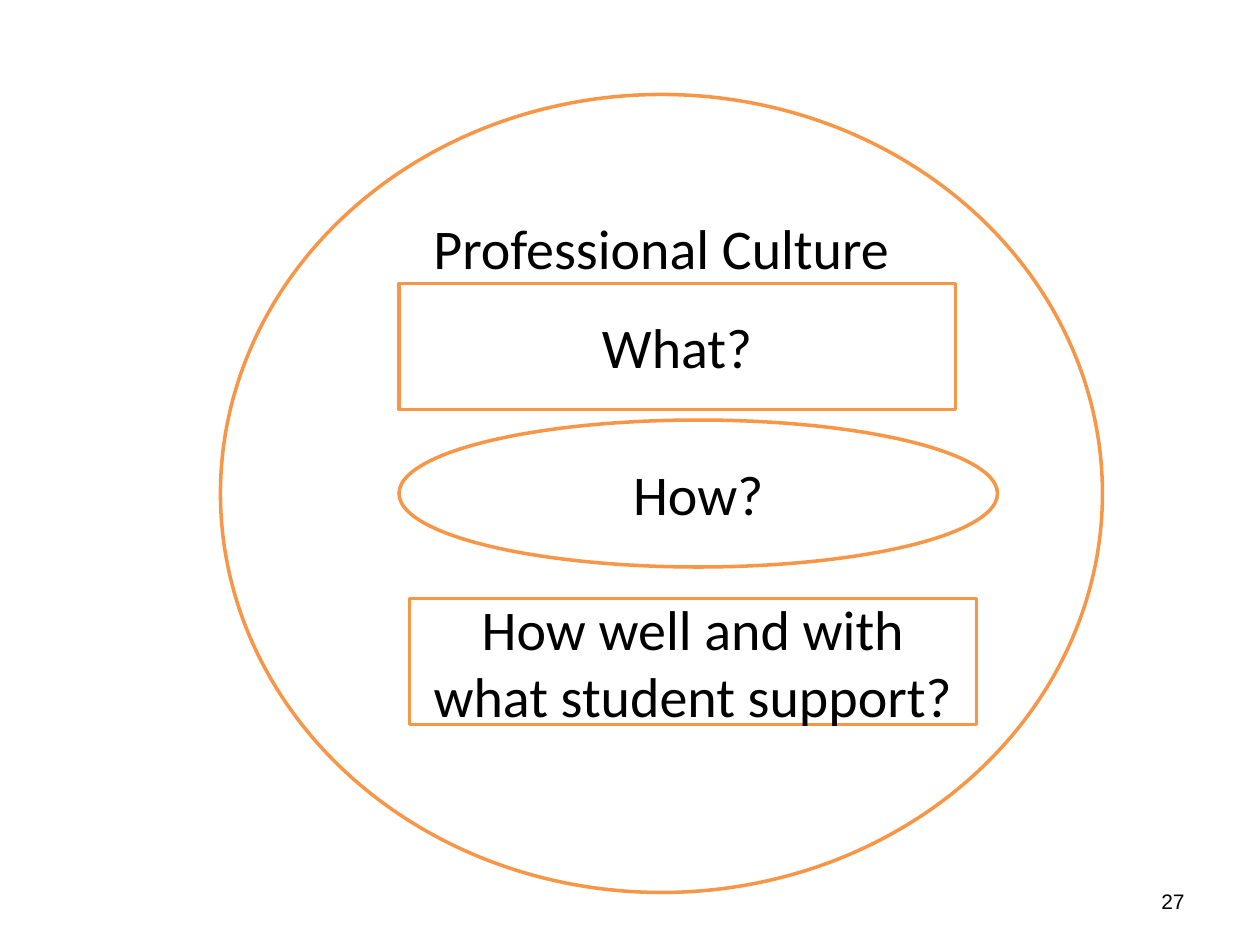
import pptx
import pptx.util
import pptx.dml.color
import pptx.enum.shapes
import pptx.enum.text

Pt = pptx.util.Pt
SHAPE = pptx.enum.shapes.MSO_SHAPE
ANCHOR = pptx.enum.text.MSO_ANCHOR
ALIGN = pptx.enum.text.PP_ALIGN

ORANGE = pptx.dml.color.RGBColor(0xF7, 0x96, 0x46)
WHITE = pptx.dml.color.RGBColor(0xFF, 0xFF, 0xFF)
BLACK = pptx.dml.color.RGBColor(0, 0, 0)

# Content, back to front: text, outline, (left, top, width, height), anchor
CULTURE_AND_QUESTIONS = [
    ("Professional Culture", SHAPE.OVAL, (126, 54, 504, 456), ANCHOR.TOP),
    ("How?", SHAPE.OVAL, (228, 240, 342, 84), ANCHOR.MIDDLE),
    ("What?", SHAPE.RECTANGLE, (228, 162, 318, 72), ANCHOR.MIDDLE),
    ("How well and with what student support?", SHAPE.RECTANGLE,
     (234, 342, 324, 72), ANCHOR.MIDDLE),
]
PAGE_NUMBER = "27"
PAGE_NUMBER_BOX = (516, 500.5, 168, 28.5)


def write(frame, text, font_name, size, align, anchor):
    frame.word_wrap = True
    frame.vertical_anchor = anchor
    paragraph = frame.paragraphs[0]
    paragraph.text = text
    paragraph.alignment = align
    paragraph.font.name = font_name
    paragraph.font.size = Pt(size)
    paragraph.font.color.rgb = BLACK


def main():
    deck = pptx.Presentation()
    deck.slide_width, deck.slide_height = Pt(720), Pt(540)
    slide = deck.slides.add_slide(deck.slide_layouts[6])

    # Page number
    page_number = slide.shapes.add_textbox(*map(Pt, PAGE_NUMBER_BOX))
    write(page_number.text_frame, PAGE_NUMBER, "Arial", 12,
          ALIGN.RIGHT, ANCHOR.MIDDLE)

    # Culture circle with the three questions inside it
    for text, outline, box, anchor in CULTURE_AND_QUESTIONS:
        region = slide.shapes.add_shape(outline, *map(Pt, box))
        region.shadow.inherit = False
        region.fill.solid()
        region.fill.fore_color.rgb = WHITE
        region.line.color.rgb = ORANGE
        region.line.width = Pt(2)
        region.text_frame.margin_top = region.text_frame.margin_bottom = Pt(1)
        write(region.text_frame, text, "Calibri", 32, ALIGN.CENTER, anchor)

    deck.save("out.pptx")


if __name__ == "__main__":
    main()
